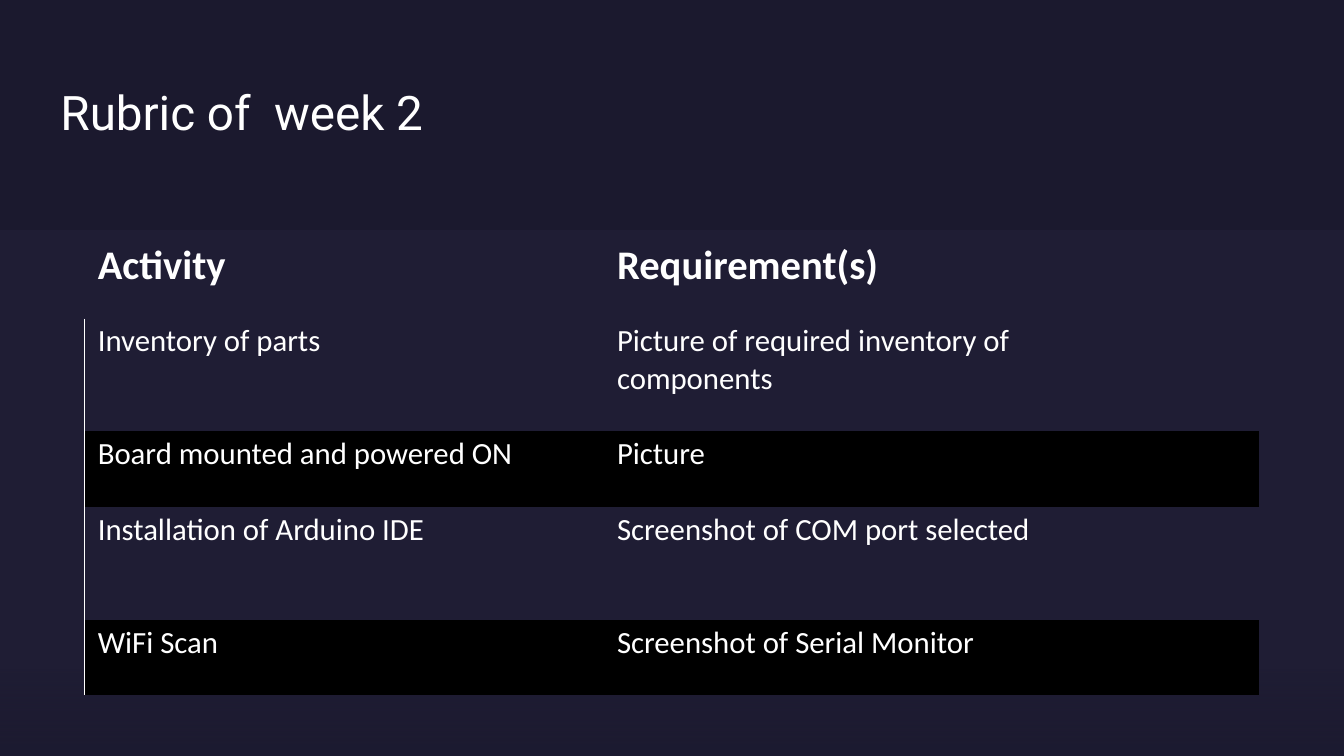
import pptx
import pptx.util
import pptx.dml.color
import pptx.enum.shapes
import pptx.enum.text
import pptx.oxml.ns
from lxml import etree

Inches = pptx.util.Inches
Pt = pptx.util.Pt
RGB = pptx.dml.color.RGBColor.from_string
qn = pptx.oxml.ns.qn
Anchor = pptx.enum.text.MSO_ANCHOR


class Theme:
    navy = "1B192E"
    violet = "7771B2"
    black = "000000"
    white = "FFFFFF"
    head = "Roboto"
    body = "Calibri"
    title = 34
    label = 29
    text = 22


def panel(top, height):
    box = slide.shapes.add_shape(
        pptx.enum.shapes.MSO_SHAPE.RECTANGLE,
        0, Inches(top), deck.slide_width, Inches(height))
    box.shadow.inherit = False
    box.line.fill.background()
    return box


def style(para, name, size, bold=False):
    for run in para.runs:
        run.font.name = name
        run.font.size = Pt(size)
        run.font.bold = bold
        run.font.color.rgb = RGB(Theme.white)


deck = pptx.Presentation()
deck.slide_width = Inches(13.33)
deck.slide_height = Inches(7.5)
slide = deck.slides.add_slide(deck.slide_layouts[6])
slide.background.fill.solid()
slide.background.fill.fore_color.rgb = RGB(Theme.navy)

# Backdrop, tinted lower panel and fade at the foot
for top, height, color in [(0, 7.5, Theme.navy), (2.28, 5.22, Theme.violet)]:
    tint = panel(top, height)
    tint.fill.solid()
    tint.fill.fore_color.rgb = RGB(color)
color = tint.fill._xPr.find(".//" + qn("a:srgbClr"))
etree.SubElement(color, qn("a:alpha"), val="5000")

fade = panel(6.31, 1.19)
fade.fill.gradient()
fade.fill.gradient_angle = 270
for stop, (place, alpha) in zip(fade.fill.gradient_stops, [(0.28, 0), (0.9, 60)]):
    stop.position = place
    stop.color.rgb = RGB(Theme.navy)
for color, alpha in zip(fade.fill._xPr.iter(qn("a:srgbClr")), [0, 60]):
    etree.SubElement(color, qn("a:alpha"), val=str(alpha * 1000))

# Title
title = slide.shapes.add_textbox(Inches(0.6), Inches(0.6), Inches(7.32), Inches(1.08))
frame = title.text_frame
frame.word_wrap = True
frame.vertical_anchor = Anchor.MIDDLE
frame.margin_left = frame.margin_right = frame.margin_top = frame.margin_bottom = 0
frame.text = "Rubric of  week 2"
frame.paragraphs[0].line_spacing = 0.9
style(frame.paragraphs[0], Theme.head, Theme.title)

# Rubric table
rubric = [
    ("Activity", "Requirement(s)", ""),
    ("Inventory of parts", "Picture of required inventory of components", ""),
    ("Board mounted and powered ON", "Picture", ""),
    ("Installation of Arduino IDE", "Screenshot of COM port selected", ""),
    ("WiFi Scan", "Screenshot of Serial Monitor", ""),
]
widths = [5.15, 4.69, 1.81]
heights = [0.88, 1.12, 0.75, 1.12, 0.75]

table = slide.shapes.add_table(
    len(rubric), len(widths), Inches(0.84), Inches(2.28),
    Inches(sum(widths)), Inches(sum(heights))).table
table.first_row = table.horz_banding = False
# "No Style, No Grid"
table._tbl.tblPr.find(qn("a:tableStyleId")).text = "{2D5ABB26-0587-4C30-8999-92F81FD0307C}"
for col, width in zip(table.columns, widths):
    col.width = Inches(width)

for r, (line, height) in enumerate(zip(rubric, heights)):
    table.rows[r].height = Inches(height)
    for c, words in enumerate(line):
        cell = table.cell(r, c)
        cell.margin_left, cell.margin_right = Inches(0.13), Inches(0.18)
        cell.margin_top, cell.margin_bottom = Inches(0.04), Inches(0.28)
        cell.vertical_anchor = Anchor.TOP if r else Anchor.BOTTOM
        if words:
            cell.text_frame.text = words
            style(cell.text_frame.paragraphs[0], Theme.body,
                  Theme.text if r else Theme.label, r == 0)

        # Every second body row is black
        if r and r % 2 == 0:
            cell.fill.solid()
            cell.fill.fore_color.rgb = RGB(Theme.black)
        else:
            cell.fill.background()

        # White rule left of the body rows
        if r and c == 0:
            edge = etree.Element(qn("a:lnL"), w=str(Pt(0.75)))
            fill = etree.SubElement(edge, qn("a:solidFill"))
            etree.SubElement(fill, qn("a:srgbClr"), val=Theme.white)
            cell._tc.get_or_add_tcPr().insert(0, edge)

deck.save("out.pptx")
